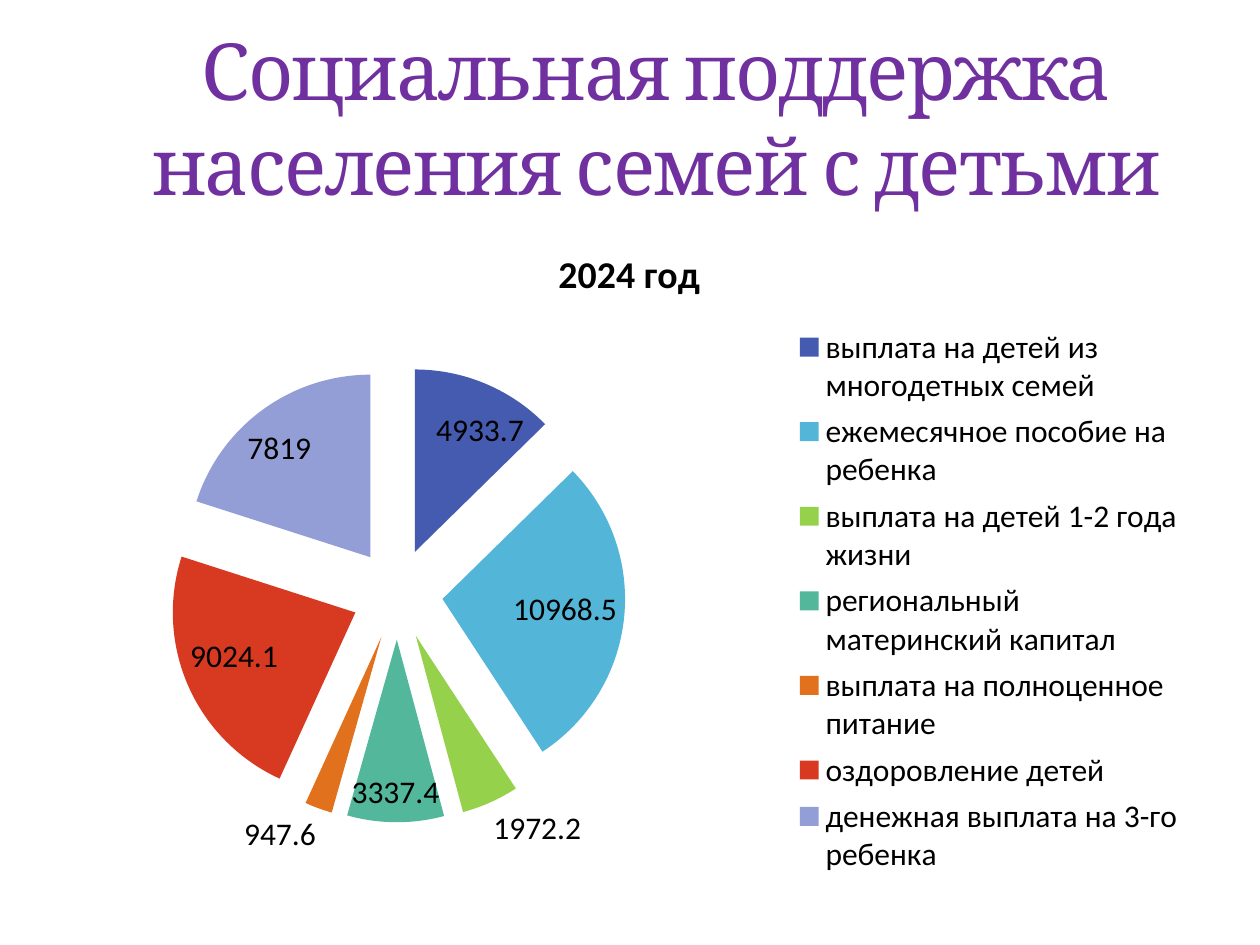
from lxml import etree
from pptx import Presentation
from pptx.chart.data import CategoryChartData
from pptx.dml.color import RGBColor
from pptx.enum.chart import XL_CHART_TYPE, XL_LABEL_POSITION, XL_LEGEND_POSITION
from pptx.enum.text import MSO_ANCHOR, PP_ALIGN
from pptx.oxml.ns import qn
from pptx.util import Inches, Pt

PURPLE = RGBColor(0x70, 0x30, 0xA0)
BLACK = RGBColor(0, 0, 0)
BLUE = RGBColor(0x45, 0x5B, 0xB0)
SKY = RGBColor(0x53, 0xB5, 0xD8)
LIME = RGBColor(0x95, 0xD1, 0x4B)
TEAL = RGBColor(0x53, 0xB7, 0x9B)
ORANGE = RGBColor(0xE2, 0x71, 0x1D)
RED = RGBColor(0xD7, 0x3A, 0x20)
LAVENDER = RGBColor(0x94, 0x9E, 0xD6)

YEAR = "2024 год"
PAYMENTS = [
    ("выплата на детей из многодетных семей", 4933.7, BLUE),
    ("ежемесячное пособие на ребенка", 10968.5, SKY),
    ("выплата на детей 1-2 года жизни", 1972.2, LIME),
    ("региональный материнский капитал", 3337.4, TEAL),
    ("выплата на полноценное питание", 947.6, ORANGE),
    ("оздоровление детей", 9024.1, RED),
    ("денежная выплата на 3-го ребенка", 7819, LAVENDER),
]


def style_font(font, name, size, color, bold=False):
    font.name = name
    font.size = Pt(size)
    font.color.rgb = color
    font.bold = bold


def set_layout(parent, index, settings):
    for old in parent.findall(qn("c:layout")):
        parent.remove(old)
    layout = etree.Element(qn("c:layout"))
    manual = etree.SubElement(layout, qn("c:manualLayout"))
    for name, value in settings.items():
        etree.SubElement(manual, qn(f"c:{name}"), val=str(value))
    parent.insert(index, layout)


def add_heading(slide, left, top, width, height):
    box = slide.shapes.add_textbox(left, top, width, height)
    frame = box.text_frame
    frame.word_wrap = True
    frame.vertical_anchor = MSO_ANCHOR.MIDDLE
    para = frame.paragraphs[0]
    para.text = "Социальная поддержка\vнаселения семей с детьми"
    para.alignment = PP_ALIGN.CENTER
    for span in para.runs:
        style_font(span.font, "Cambria", 45, PURPLE)
        span.font._element.set("spc", "-100")


def add_payments_pie(slide, left, top, width, height):
    data = CategoryChartData()
    data.categories = [name for name, _, _ in PAYMENTS]
    data.add_series(YEAR, [value for _, value, _ in PAYMENTS])
    chart = slide.shapes.add_chart(
        XL_CHART_TYPE.PIE, left, top, width, height, data
    ).chart
    style_font(chart.font, "Calibri", 18, BLACK)

    chart.has_title = True
    title = chart.chart_title.text_frame
    title.text = YEAR
    style_font(title.paragraphs[0].runs[0].font, "Calibri", 21.6, BLACK, True)

    chart.has_legend = True
    chart.legend.position = XL_LEGEND_POSITION.RIGHT
    chart.legend.include_in_layout = False
    set_layout(
        chart.legend._element,
        1,
        {"xMode": "edge", "yMode": "edge", "x": 0.65, "y": 0.15, "w": 0.34, "h": 0.85},
    )
    set_layout(
        chart._chartSpace.find(f".//{qn('c:plotArea')}"),
        0,
        {
            "layoutTarget": "inner",
            "xMode": "edge",
            "yMode": "edge",
            "x": 0.09,
            "y": 0.22,
            "w": 0.41,
            "h": 0.69,
        },
    )

    plot = chart.plots[0]
    plot.vary_by_categories = True
    series = plot.series[0]
    explosion = etree.Element(qn("c:explosion"), val="25")
    series._element.find(qn("c:tx")).addnext(explosion)
    for index, (_, _, color) in enumerate(PAYMENTS):
        fill = series.points[index].format.fill
        fill.solid()
        fill.fore_color.rgb = color

    plot.has_data_labels = True
    labels = plot.data_labels
    labels.show_value = True
    labels.show_percentage = False
    labels.number_format = "General"
    labels.number_format_is_linked = False
    labels.position = XL_LABEL_POSITION.BEST_FIT
    style_font(labels.font, "Calibri", 18, BLACK)


def main():
    deck = Presentation()
    deck.slide_width = Inches(10)
    deck.slide_height = Inches(7.5)
    slide = deck.slides.add_slide(deck.slide_layouts[6])
    add_heading(slide, Inches(1.01), Inches(0.3), Inches(8.4), Inches(1.25))
    add_payments_pie(slide, Inches(0.5), Inches(1.75), Inches(8.99), Inches(5.25))
    deck.save("out.pptx")


if __name__ == "__main__":
    main()
